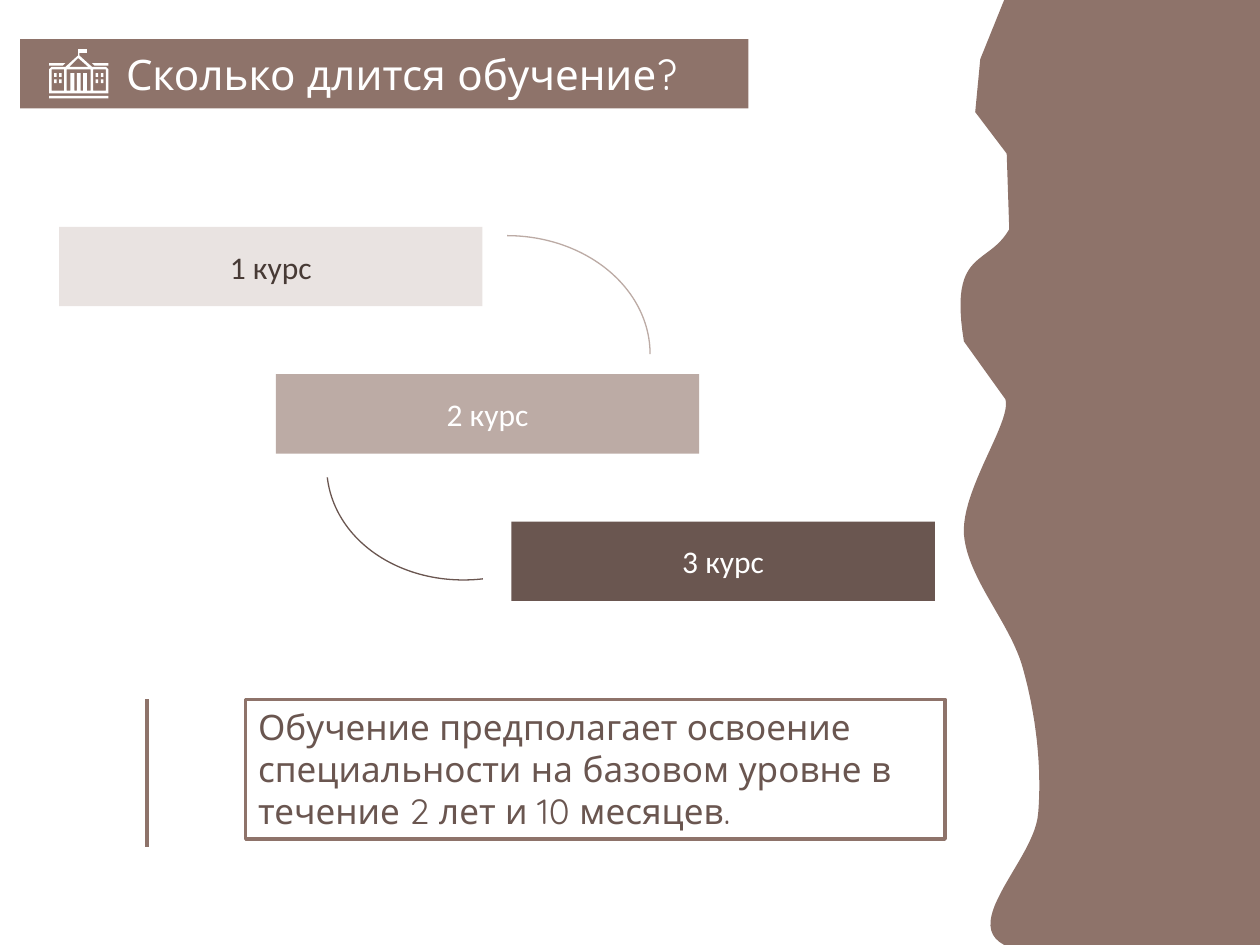
from dataclasses import dataclass
from pptx import Presentation, util as u
from pptx.dml import color
from pptx.enum import shapes, text

BROWN, DARK, MID, WHITE = "8E736A", "6A5650", "BCABA5", "FFFFFF"


@dataclass
class Style:
    size: int
    name: str
    tint: str


@dataclass
class Step:
    label: str
    left: float
    fill: str
    ink: str


@dataclass
class Arc:
    left: float
    top: float
    turn: float
    tint: str


def rgb(code: str) -> color.RGBColor:
    return color.RGBColor.from_string(code)


def paint(shape, fill: str = "", line: str = "", width: float = 1) -> None:
    shape.shadow.inherit = False
    if fill:
        shape.fill.solid()
        shape.fill.fore_color.rgb = rgb(fill)
    else:
        shape.fill.background()
    if line:
        shape.line.color.rgb = rgb(line)
        shape.line.width = u.Pt(width)
    else:
        shape.line.fill.background()


def place(shape, box: tuple) -> None:
    for key, value in zip(("left", "top", "width", "height"), box):
        setattr(shape, key, u.Inches(value))


def write(shape, words: str, style: Style, align, anchor, inset: float = 0.1) -> None:
    frame = shape.text_frame
    frame.text = words
    form = {"word_wrap": True, "auto_size": text.MSO_AUTO_SIZE.NONE,
            "vertical_anchor": anchor, "margin_left": u.Inches(inset)}
    for key, value in form.items():
        setattr(frame, key, value)
    par = frame.paragraphs[0]
    par.alignment = align
    font = par.runs[0].font
    for key, value in {"size": u.Pt(style.size), "name": style.name, "bold": False}.items():
        setattr(font, key, value)
    font.color.rgb = rgb(style.tint)


def add(page, kind, box: tuple):
    return page.shapes.add_shape(kind, *(u.Inches(v) for v in box))


def rect(x1: float, y1: float, x2: float, y2: float) -> list:
    return [(x1, y1), (x2, y1), (x2, y2), (x1, y2)]


def bend(p: tuple, q: tuple, r: tuple, s: tuple, count: int = 24) -> list:
    spots = []
    for i in range(1, count + 1):
        t = i / count
        k = ((1 - t) ** 3, 3 * t * (1 - t) ** 2, 3 * t * t * (1 - t), t ** 3)
        spots.append(tuple(sum(a * b for a, b in zip(k, axis)) for axis in zip(p, q, r, s)))
    return spots


def trace(page, loops: list, fill: str) -> None:
    paths = [[(u.Inches(x), u.Inches(y)) for x, y in loop] for loop in loops]
    pen = page.shapes.build_freeform(*paths[0][0], scale=1.0)
    for i, path in enumerate(paths):
        if i:
            pen.move_to(*path[0])
        pen.add_line_segments(path[1:], close=True)
    paint(pen.convert_to_shape(), fill)


def wave(page) -> None:
    edge = [(7.97, 0), (10, 0), (10, 7.5), (7.97, 7.5)]
    lower = [((7.62, 7.32), (8.22, 6.81), (8.24, 6.45)),
             ((8.27, 6.08), (8.22, 5.67), (8.12, 5.31)),
             ((8.02, 4.94), (7.68, 4.6), (7.65, 4.24)),
             ((7.63, 3.88), (8.03, 3.35), (7.98, 3.17))]
    for curve in lower:
        edge += bend(edge[-1], *curve)
    edge.append((7.65, 2.71))
    edge += bend(edge[-1], (7.53, 1.97), (7.84, 2.12), (8.01, 1.82))
    edge += [(7.99, 1.22), (7.74, 0.89), (7.78, 0.47)]
    trace(page, [edge], BROWN)


def school(page) -> None:
    body = [(0.39, 0.74), (0.39, 0.55), (0.41, 0.53), (0.52, 0.53), (0.62, 0.44),
            (0.62, 0.39), (0.69, 0.39), (0.69, 0.42), (0.63, 0.42), (0.63, 0.44),
            (0.73, 0.53), (0.84, 0.53), (0.86, 0.55), (0.86, 0.74)]
    roof = [(0.62, 0.46), (0.55, 0.53), (0.7, 0.53)]
    rooms = [rect(a, 0.55, b, 0.72) for a, b in ((0.41, 0.51), (0.53, 0.72), (0.74, 0.84))]
    posts = [rect(x, 0.58, x + 0.03, 0.72) for x in (0.56, 0.61, 0.66)]
    panes = [rect(x, y, x + 0.02, y + 0.03)
             for x in (0.43, 0.47, 0.76, 0.8) for y in (0.58, 0.63)]
    eaves = [[(0.39, 0.5), (0.52, 0.5), (0.5, 0.52), (0.39, 0.52)],
             [(0.73, 0.5), (0.86, 0.5), (0.86, 0.52), (0.75, 0.52)]]
    base = rect(0.39, 0.76, 0.86, 0.78)
    trace(page, [body, roof, *rooms, *posts, *panes, *eaves, base], WHITE)


def rule(page) -> None:
    ends = (u.Inches(v) for v in (1.17, 5.55, 1.17, 6.72))
    line = page.shapes.add_connector(shapes.MSO_CONNECTOR.STRAIGHT, *ends)
    line.line.color.rgb = rgb(BROWN)
    line.line.width = u.Pt(2.25)
    props = line._element.spPr
    props.append(props.makeelement(
        "{http://schemas.openxmlformats.org/drawingml/2006/main}effectLst", {}))


def main() -> None:
    deck = Presentation()
    deck.slide_width, deck.slide_height = u.Inches(10), u.Inches(7.5)
    page = deck.slides.add_slide(deck.slide_layouts[5])
    box, arc = shapes.MSO_SHAPE.RECTANGLE, shapes.MSO_SHAPE.ARC
    left, center = text.PP_ALIGN.LEFT, text.PP_ALIGN.CENTER
    top, middle = text.MSO_ANCHOR.TOP, text.MSO_ANCHOR.MIDDLE

    wave(page)
    title = page.shapes.title
    place(title, (0.16, 0.31, 5.78, 0.55))
    paint(title, BROWN)
    write(title, "Сколько длится обучение?", Style(24, "Quicksand", WHITE), left, middle, 0.84)
    school(page)

    note = add(page, box, (1.95, 5.55, 5.55, 1.11))
    paint(note, WHITE, BROWN, 2)
    write(note, "Обучение предполагает освоение специальности на базовом уровне "
          "в течение 2 лет и 10 месяцев.", Style(20, "Quicksand", DARK), left, top)
    rule(page)

    steps = [Step("1 курс", 0.47, "E9E3E1", "473A35"),
             Step("2 курс", 2.19, MID, WHITE),
             Step("3 курс", 4.06, DARK, WHITE)]
    for i, step in enumerate(steps):
        bar = add(page, box, (step.left, 1.8 + 1.17 * i, 3.36, 0.63))
        paint(bar, step.fill)
        write(bar, step.label, Style(18, "Calibri", step.ink), center, middle)

    for item in (Arc(2.89, 1.87, 0, MID), Arc(2.59, 2.72, 173.5, DARK)):
        curve = add(page, arc, (item.left, item.top, 2.27, 1.88))
        curve.rotation = item.turn
        paint(curve, line=item.tint, width=0.75)

    deck.save("out.pptx")


if __name__ == "__main__":
    main()
